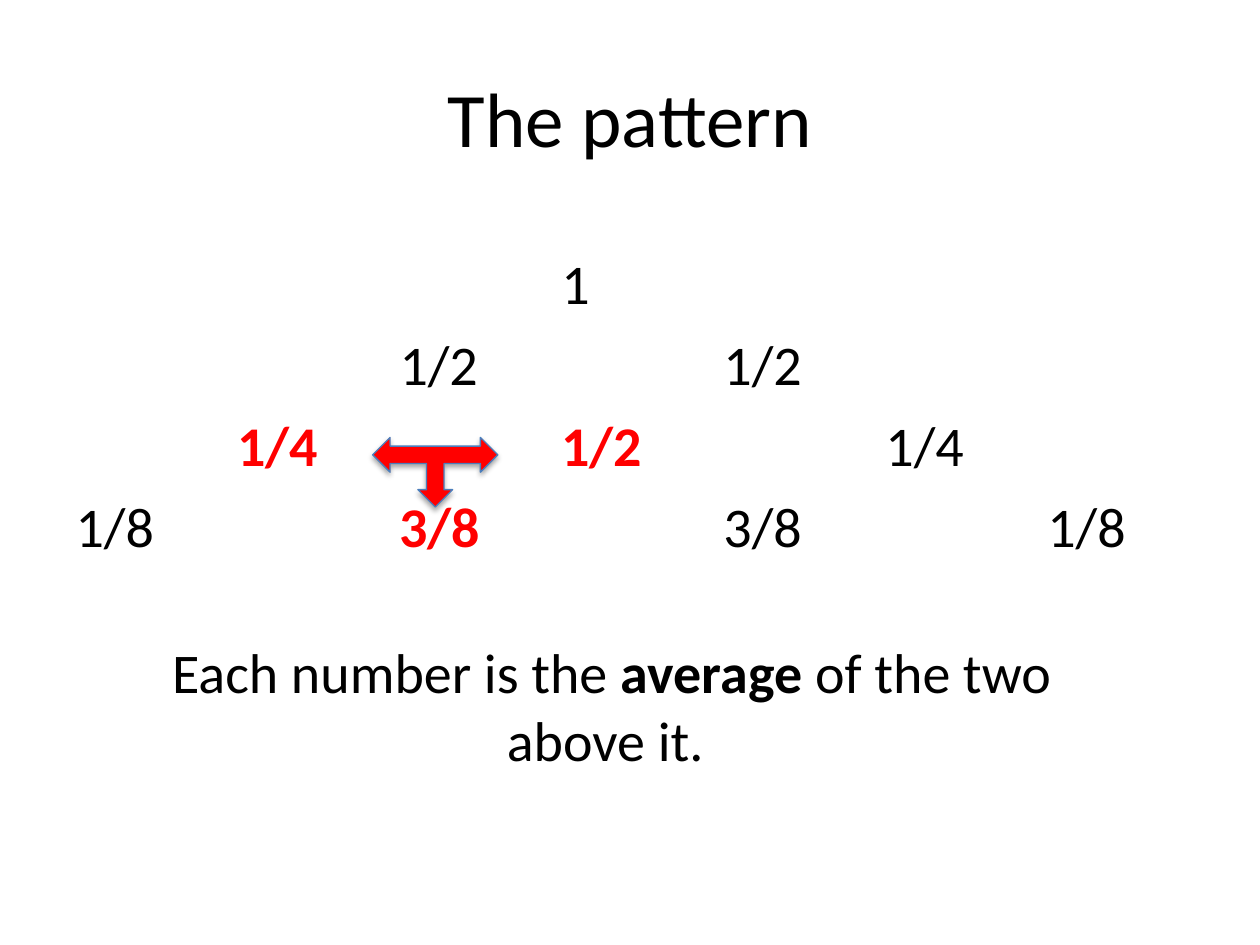
import dataclasses

import lxml.etree
import pptx
import pptx.dml.color
import pptx.enum.shapes
import pptx.enum.text
import pptx.oxml
import pptx.oxml.ns
import pptx.util

Pt = pptx.util.Pt
Color = pptx.dml.color.RGBColor


@dataclasses.dataclass(frozen=True)
class Theme:
    font: str = "Calibri"
    title_size: int = 44
    body_size: int = 32
    text: Color = Color(0, 0, 0)
    accent: Color = Color(255, 0, 0)
    paper: Color = Color(255, 255, 255)
    outline: Color = Color(0x4B, 0x7E, 0xBC)


THEME = Theme()
TRIANGLE = [
    ["1"],
    ["1/2", "1/2"],
    ["1/4", "1/2", "1/4"],
    ["1/8", "3/8", "3/8", "1/8"],
]
HIGHLIGHTED = {(2, 0), (2, 1), (3, 1)}  # row, place in row


def format_span(span, size, color=THEME.text, bold=False):
    span.font.name = THEME.font
    span.font.size = Pt(size)
    span.font.color.rgb = color
    span.font.bold = bold


def place_title(page, left, top, width, height):
    title = page.shapes.title
    title.left, title.top, title.width, title.height = map(Pt, (left, top, width, height))
    title.text_frame.text = "The pattern"
    title.text_frame.vertical_anchor = pptx.enum.text.MSO_ANCHOR.MIDDLE
    para = title.text_frame.paragraphs[0]
    para.alignment = pptx.enum.text.PP_ALIGN.CENTER
    format_span(para.runs[0], THEME.title_size)


def place_triangle(page, left, top, width, height):
    """Spread each row's values over every second column, centred on the apex."""
    row_count = len(TRIANGLE)
    column_count = 2 * row_count - 1
    table = page.shapes.add_table(
        row_count, column_count, Pt(left), Pt(top), Pt(width), Pt(height)
    ).table
    for cell in table.iter_cells():
        cell.fill.solid()
        cell.fill.fore_color.rgb = THEME.paper
    for row, values in enumerate(TRIANGLE):
        for place, value in enumerate(values):
            cell = table.cell(row, row_count - 1 - row + 2 * place)
            cell.text_frame.text = value
            marked = (row, place) in HIGHLIGHTED
            color = THEME.accent if marked else THEME.text
            format_span(cell.text_frame.paragraphs[0].runs[0], THEME.body_size, color, marked)


def place_rule(page, left, top, width, height):
    box = page.shapes.add_textbox(Pt(left), Pt(top), Pt(width), Pt(height))
    box.text_frame.word_wrap = True
    box.text_frame.auto_size = pptx.enum.text.MSO_AUTO_SIZE.SHAPE_TO_FIT_TEXT
    para = box.text_frame.paragraphs[0]
    para.alignment = pptx.enum.text.PP_ALIGN.CENTER
    for words, bold in (
        ("Each number is the ", False),
        ("average", True),
        (" of the two above it. ", False),
    ):
        span = para.add_run()
        span.text = words
        format_span(span, THEME.body_size, bold=bold)


def add_soft_shadow(shape):
    shape.shadow.inherit = False
    effects = shape.element.spPr.find(pptx.oxml.ns.qn("a:effectLst"))
    effects.append(pptx.oxml.parse_xml(
        f'<a:outerShdw {pptx.oxml.ns.nsdecls("a")} blurRad="{Pt(3.1)}" dist="{Pt(1.8)}"'
        ' dir="5400000" rotWithShape="0"><a:srgbClr val="000000">'
        '<a:alpha val="35000"/></a:srgbClr></a:outerShdw>'
    ))


def place_average_arrow(page, left, top, width, height):
    arrow = page.shapes.add_shape(
        pptx.enum.shapes.MSO_SHAPE.LEFT_RIGHT_UP_ARROW,
        Pt(left), Pt(top), Pt(width), Pt(height),
    )
    arrow.element.spPr.find(pptx.oxml.ns.qn("a:xfrm")).set("flipV", "1")
    arrow.fill.solid()
    arrow.fill.fore_color.rgb = THEME.accent
    arrow.line.color.rgb = THEME.outline
    arrow.line.width = Pt(0.75)
    add_soft_shadow(arrow)


def main():
    deck = pptx.Presentation()
    deck.slide_width, deck.slide_height = Pt(720), Pt(540)
    page = deck.slides.add_slide(deck.slide_layouts.get_by_name("Title Only"))
    place_title(page, 36, 21.6, 648, 90)
    place_triangle(page, 36, 140, 648, 182)
    place_rule(page, 72.5, 361, 554, 85)
    place_average_arrow(page, 213, 250, 71.5, 39.8)
    deck.save("out.pptx")


if __name__ == "__main__":
    main()
